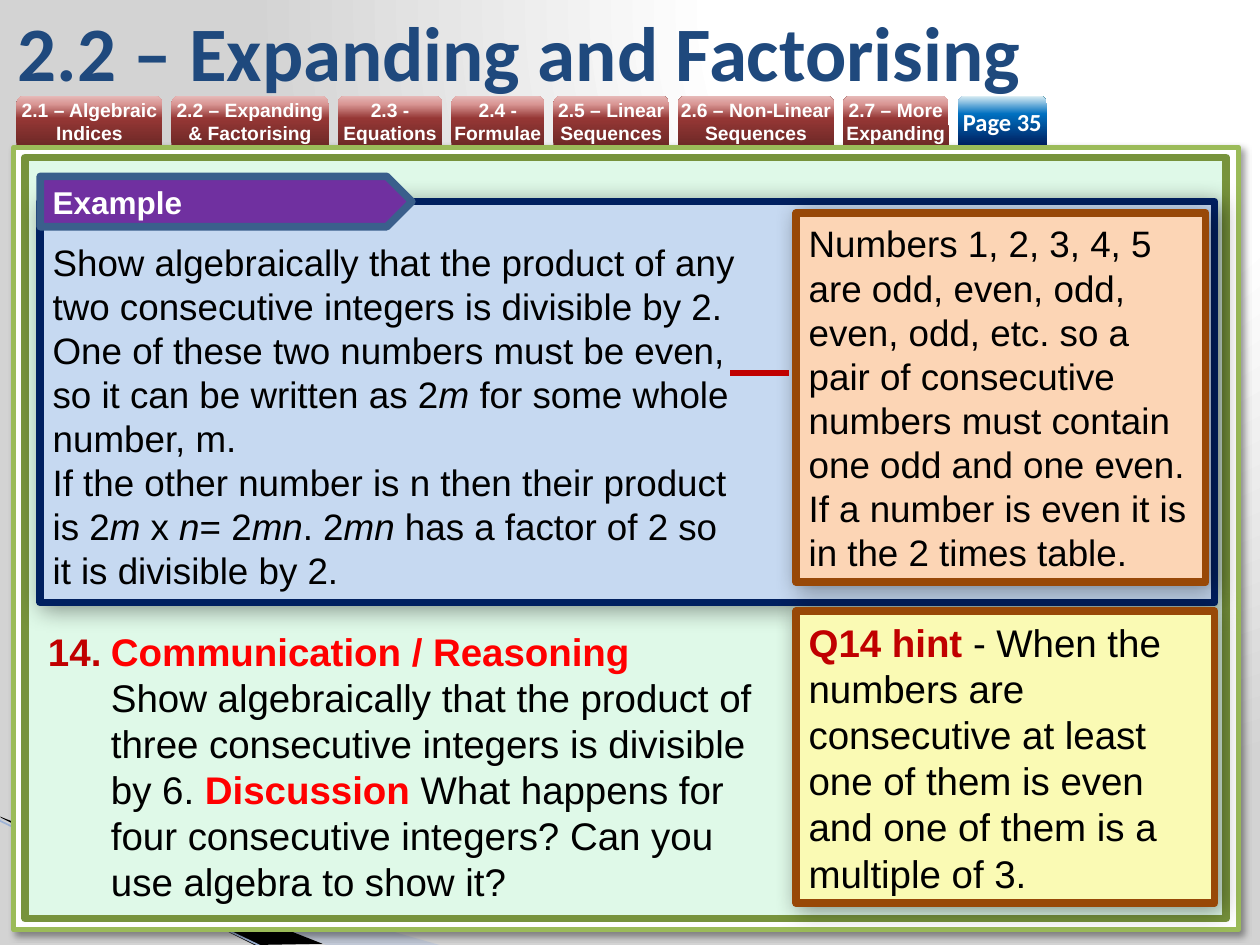
from dataclasses import dataclass, field
from typing import Optional

import lxml.etree
import pptx
import pptx.dml.color
import pptx.enum.shapes
import pptx.enum.text
import pptx.oxml
import pptx.util

Pt = pptx.util.Pt
RGBColor = pptx.dml.color.RGBColor
SHAPE = pptx.enum.shapes.MSO_SHAPE
ANCHOR = pptx.enum.text.MSO_ANCHOR
ALIGN = pptx.enum.text.PP_ALIGN
AUTO = pptx.enum.text.MSO_AUTO_SIZE

A = "http://schemas.openxmlformats.org/drawingml/2006/main"

BLACK = RGBColor(0x00, 0x00, 0x00)
WHITE = RGBColor(0xFF, 0xFF, 0xFF)
RED = RGBColor(0xFF, 0x00, 0x00)
CRIMSON = RGBColor(0xC0, 0x00, 0x00)
NAVY = RGBColor(0x00, 0x20, 0x60)
TITLE_BLUE = RGBColor(0x1F, 0x49, 0x7D)
EDGE_BLUE = RGBColor(0x3A, 0x5F, 0x8C)
PALE_BLUE = RGBColor(0xC6, 0xD9, 0xF1)
SWOOSH_BLUE = RGBColor(0xA7, 0xB9, 0xDB)
SWOOSH_LINE = RGBColor(0x9E, 0xB3, 0xD6)
LIME = RGBColor(0x9B, 0xBB, 0x59)
OLIVE = RGBColor(0x77, 0x93, 0x3C)
MINT = RGBColor(0xDF, 0xF9, 0xE8)
PURPLE = RGBColor(0x70, 0x30, 0xA0)
BROWN = RGBColor(0x98, 0x48, 0x07)
PEACH = RGBColor(0xFC, 0xD5, 0xB5)
YELLOW = RGBColor(0xFA, 0xFA, 0xB4)
GREY = RGBColor(0xD3, 0xD3, 0xD3)

BACKGROUND = [(0, WHITE), (40, WHITE), (100, GREY)]
RED_TAB = [(0, RGBColor(0x6F, 0x29, 0x27)), (54, RGBColor(0x95, 0x37, 0x35)),
           (83, RGBColor(0xD9, 0x96, 0x94)), (100, RGBColor(0xE6, 0xB9, 0xB8))]
BLUE_TAB = [(0, NAVY), (63, RGBColor(0x00, 0x70, 0xC0)), (100, RGBColor(0xDB, 0xEE, 0xF4))]

BASE = dict(name="Arial", size=Pt(21), bold=False, italic=False, color=BLACK)
ITALIC = dict(italic=True)
LARGE = dict(size=Pt(22))
HEADING = dict(size=Pt(22), bold=True, color=RED)
HINT = dict(size=Pt(22), bold=True, color=CRIMSON)
LABEL = dict(size=Pt(18), bold=True, color=WHITE)
TAB = dict(size=Pt(11), bold=True, color=WHITE)
PAGE = dict(name="Calibri", size=Pt(14), bold=True, color=WHITE)
TITLE = dict(name="Calibri", size=Pt(44), bold=True, color=TITLE_BLUE)

Paragraphs = list[list[tuple[str, dict]]]


@dataclass
class Box:
    at: tuple[float, float, float, float]
    fill: RGBColor | list
    line: Optional[RGBColor] = None
    weight: float = 4.33
    kind: int = SHAPE.RECTANGLE
    blur: float = 0
    paragraphs: Paragraphs = field(default_factory=list)
    anchor: int = ANCHOR.MIDDLE
    align: int = ALIGN.LEFT
    insets: tuple[float, float, float, float] = (7.2, 3.6, 7.2, 3.6)
    grow: bool = False


def set_gradient(fill, stops: list, radial: bool = False) -> None:
    fill.gradient()
    if not radial:
        fill.gradient_angle = 90
    grad = fill._fill._gradFill
    stop_list = grad.find(f"{{{A}}}gsLst")
    stop_list.clear()
    for pos, color in stops:
        gs = lxml.etree.SubElement(stop_list, f"{{{A}}}gs", pos=str(pos * 1000))
        lxml.etree.SubElement(gs, f"{{{A}}}srgbClr", val=str(color))
    if radial:
        grad.replace(grad.find(f"{{{A}}}lin"), pptx.oxml.parse_xml(
            f'<a:path xmlns:a="{A}" path="circle">'
            '<a:fillToRect l="65000" t="0" r="0" b="98000"/></a:path>'))


def add_shadow(sp, blur: float) -> None:
    effects = sp._element.spPr.find(f"{{{A}}}effectLst")
    effects.append(pptx.oxml.parse_xml(
        f'<a:outerShdw xmlns:a="{A}" blurRad="{Pt(blur)}" dist="{Pt(3)}" dir="2700000" '
        'algn="tl" rotWithShape="0"><a:srgbClr val="000000"><a:alpha val="40000"/>'
        '</a:srgbClr></a:outerShdw>'))


def write_text(tf, paragraphs: Paragraphs, align: int = ALIGN.LEFT) -> None:
    for i, runs in enumerate(paragraphs):
        p = tf.add_paragraph() if i else tf.paragraphs[0]
        p.alignment = align
        p.space_before = Pt(0)
        for text, style in runs:
            if text == "\n":
                p.add_line_break()
                continue
            r = p.add_run()
            r.text = text
            for key, value in (BASE | style).items():
                if key == "color":
                    r.font.color.rgb = value
                else:
                    setattr(r.font, key, value)


def format_frame(tf, anchor: int, grow: bool, insets: tuple = (7.2, 3.6, 7.2, 3.6)) -> None:
    left, top, right, bottom = map(Pt, insets)
    settings = dict(word_wrap=True, vertical_anchor=anchor,
                    auto_size=AUTO.SHAPE_TO_FIT_TEXT if grow else AUTO.NONE,
                    margin_left=left, margin_top=top, margin_right=right, margin_bottom=bottom)
    for key, value in settings.items():
        setattr(tf, key, value)


def add_box(s, box: Box) -> None:
    sp = s.shapes.add_shape(box.kind, *map(Pt, box.at))
    sp.shadow.inherit = False
    if isinstance(box.fill, list):
        set_gradient(sp.fill, box.fill)
    else:
        sp.fill.solid()
        sp.fill.fore_color.rgb = box.fill
    if box.line is None:
        sp.line.fill.background()
    else:
        sp.line.color.rgb = box.line
        sp.line.width = Pt(box.weight)
    if box.blur:
        add_shadow(sp, box.blur)
    if box.paragraphs:
        format_frame(sp.text_frame, box.anchor, box.grow, box.insets)
        write_text(sp.text_frame, box.paragraphs, box.align)


def add_line(s, ends: tuple, color: RGBColor, weight: float) -> None:
    line = s.shapes.add_connector(pptx.enum.shapes.MSO_CONNECTOR.STRAIGHT, *map(Pt, ends))
    line.line.color.rgb = color
    line.line.width = Pt(weight)
    lxml.etree.SubElement(line._element.spPr, f"{{{A}}}effectLst")


def add_swoosh(s, points: list, color: RGBColor, opacity: int = 100) -> None:
    start, *rest = [tuple(map(Pt, point)) for point in points]
    builder = s.shapes.build_freeform(*start)
    builder.add_line_segments(rest)
    sp = builder.convert_to_shape()
    sp.shadow.inherit = False
    sp.fill.solid()
    sp.fill.fore_color.rgb = color
    sp.line.fill.background()
    if opacity < 100:
        rgb = sp._element.spPr.find(f"{{{A}}}solidFill/{{{A}}}srgbClr")
        lxml.etree.SubElement(rgb, f"{{{A}}}alpha", val=str(opacity * 1000))


def place(s, sp, at: tuple) -> None:
    sp.left, sp.top, sp.width, sp.height = map(Pt, at)
    s.shapes._spTree.append(sp._element)  # bring to the front


def number_paragraph(p, start: int) -> None:
    pPr = p._p.get_or_add_pPr()
    pPr.set("marL", str(Pt(36)))
    pPr.set("indent", str(Pt(-36)))
    for xml in (f'<a:buClr xmlns:a="{A}"><a:srgbClr val="{CRIMSON}"/></a:buClr>',
                f'<a:buFont xmlns:a="{A}" typeface="+mj-lt"/>',
                f'<a:buAutoNum xmlns:a="{A}" type="arabicPeriod" startAt="{start}"/>',
                f'<a:tabLst xmlns:a="{A}"><a:tab pos="{Pt(72)}" algn="l"/>'
                f'<a:tab pos="{Pt(216)}" algn="l"/></a:tabLst>'):
        pPr.append(pptx.oxml.parse_xml(xml))


TABS = [("2.1 – Algebraic Indices", 83.5), ("2.2 – Expanding & Factorising", 90),
        ("2.3 - Equations", 60), ("2.4 - Formulae", 53.3), ("2.5 – Linear Sequences", 66.2),
        ("2.6 – Non-Linear Sequences", 89.3), ("2.7 – More Expanding", 60.5), ("Page 35", 51.1)]
TAB_GAP = 5

EXAMPLE = [
    [("Show algebraically that the product of any two consecutive integers is divisible by 2.", {})],
    [("One of these two numbers must be even, so it can be written as 2", {}), ("m", ITALIC),
     (" for some whole number, m.", {})],
    [("If the other number is n then their product is 2", {}), ("m", ITALIC), (" x ", {}),
     ("n", ITALIC), ("= 2", {}), ("mn", ITALIC), (". 2", {}), ("mn", ITALIC),
     (" has a factor of 2 so it is divisible by 2.", {})]]
NOTE = [[("Numbers 1, 2, 3, 4, 5 are odd, even, odd, even, odd, etc. so a pair of consecutive "
          "numbers must contain one odd and one even. If a number is even it is in the "
          "2 times table.", {})]]
QUESTION = [[("Communication / Reasoning", HEADING), ("\n", {}),
             ("Show algebraically that the product of three consecutive integers is "
              "divisible by 6. ", LARGE), ("Discussion ", HEADING),
             ("What happens for four consecutive integers? Can you use algebra to show it?", LARGE)]]
HINT_TEXT = [[("Q14 hint", HINT),
              (" - When the numbers are consecutive at least one of them is even and one of "
               "them is a multiple of 3.", LARGE)]]


def main() -> None:
    prs = pptx.Presentation()
    prs.slide_width, prs.slide_height = Pt(720), Pt(540)
    s = prs.slides.add_slide(prs.slide_layouts[1])
    title, body = s.placeholders

    # Background and corner swoosh
    set_gradient(s.background.fill, BACKGROUND, radial=True)
    add_swoosh(s, [(-0.7, 468), (251.3, 540), (186.5, 540), (-0.7, 467.3)], SWOOSH_BLUE, 40)
    add_swoosh(s, [(0, 466.6), (184.3, 539.3), (145.4, 540), (0.7, 467.3)], BLACK)
    add_line(s, (-0.7, 468.7, 150.5, 541.4), SWOOSH_LINE, 0.95)

    # Page frame
    add_box(s, Box((7.9, 84.2, 699.8, 447.1), WHITE, LIME, 3, blur=4))
    add_box(s, Box((14.4, 90, 686.2, 434.9), MINT, OLIVE))

    # Section tabs, the last one being the page marker
    left = 9.4
    for text, width in TABS:
        is_page = text.startswith("Page")
        add_box(s, Box((left, 54.7, width, 28.1), BLUE_TAB if is_page else RED_TAB,
                       kind=SHAPE.ROUND_2_SAME_RECTANGLE, align=ALIGN.CENTER,
                       paragraphs=[[(text, PAGE if is_page else TAB)]], insets=(0, 0, 0, 0)))
        left += width + TAB_GAP

    # Worked example with its side note
    add_box(s, Box((23, 115.2, 671, 229), PALE_BLUE, NAVY, blur=13, paragraphs=EXAMPLE,
                   anchor=ANCHOR.TOP, insets=(7.2, 21.6, 273.6, 3.6), grow=True))
    add_box(s, Box((23, 100.8, 212.4, 28.8), PURPLE, EDGE_BLUE, kind=SHAPE.PENTAGON,
                   paragraphs=[[("Example", LABEL)]]))
    add_box(s, Box((455, 121.7, 234, 211), PEACH, BROWN, blur=13, paragraphs=NOTE, grow=True))
    add_line(s, (450.7, 213.1, 416.9, 213.1), CRIMSON, 3)

    # Question and hint
    place(s, body, (20.2, 355, 430.6, 167))
    format_frame(body.text_frame, ANCHOR.TOP, True)
    write_text(body.text_frame, QUESTION)
    number_paragraph(body.text_frame.paragraphs[0], 14)
    add_box(s, Box((455, 349.2, 239, 167), YELLOW, BROWN, blur=13, paragraphs=HINT_TEXT, grow=True))

    # Title
    place(s, title, (2.9, 3.6, 595.4, 51.1))
    format_frame(title.text_frame, ANCHOR.MIDDLE, False)
    write_text(title.text_frame, [[("2.2 – Expanding and Factorising", TITLE)]])

    prs.save("out.pptx")


if __name__ == "__main__":
    main()
